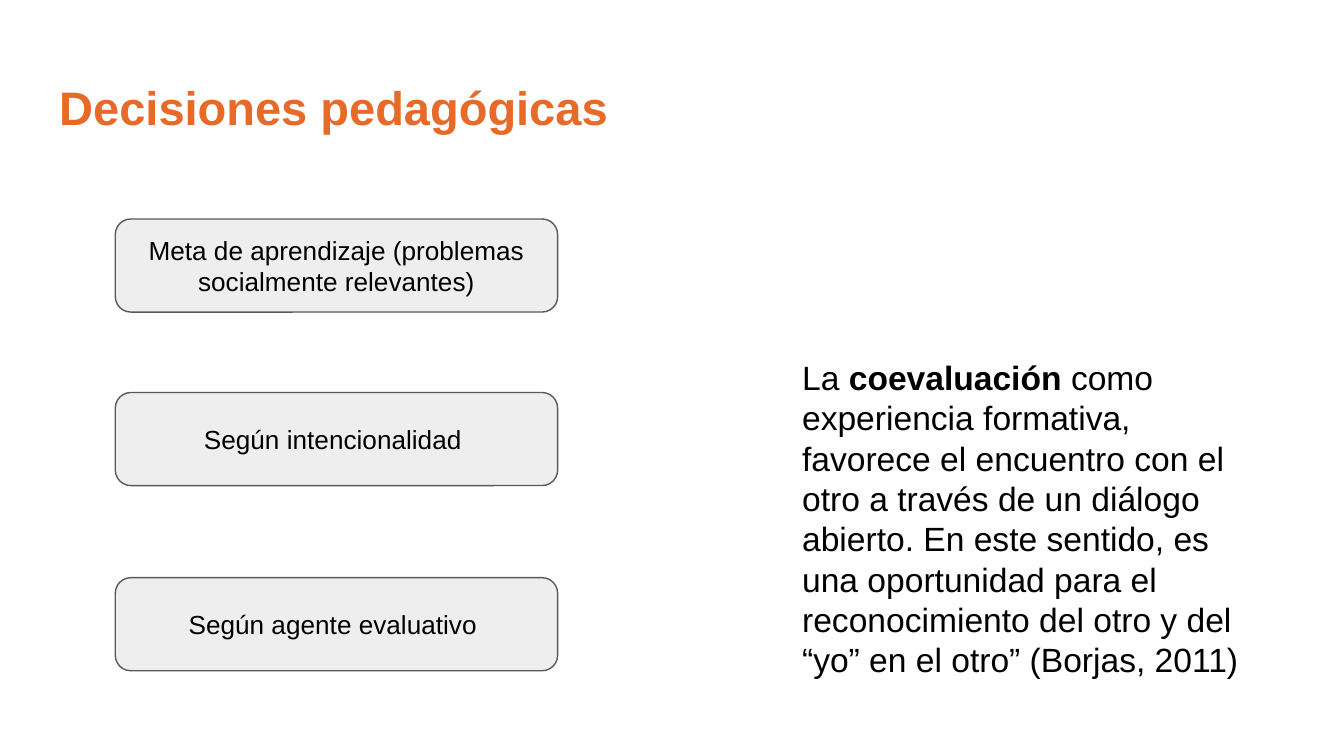
"""Build the slide on pedagogical decisions and peer assessment."""
from pptx import Presentation
from pptx.dml.color import RGBColor
from pptx.enum.shapes import MSO_SHAPE as Shape
from pptx.enum.text import MSO_ANCHOR as Anchor, PP_ALIGN as Align
from pptx.util import Cm, Pt

COLORS = {"title": "E76A28", "text": "000000", "fill": "EEEEEE", "line": "595959"}
FONT = "Arial"
MARGIN = Cm(0.25)

TITLE = [("Decisiones pedagógicas", True)]
DECISIONS = [
    ("Meta de aprendizaje (problemas socialmente relevantes)", 4.14),
    ("Según intencionalidad ", 7.42),
    ("Según agente evaluativo ", 10.92),
]
QUOTE = [
    ("La ", False),
    ("coevaluación", True),
    (" como experiencia formativa, favorece el encuentro con el otro a través "
     "de un diálogo abierto. En este sentido, es una oportunidad para el "
     "reconocimiento del otro y del “yo” en el otro” (Borjas, 2011)", False),
]


def color(name):
    return RGBColor.from_string(COLORS[name])


def write(box, runs, size, color_name="text", align=Align.LEFT, anchor=Anchor.TOP):
    frame = box.text_frame
    frame.word_wrap = True
    frame.vertical_anchor = anchor
    frame.margin_left = frame.margin_right = MARGIN
    frame.margin_top = frame.margin_bottom = MARGIN
    para = frame.paragraphs[0]
    para.alignment = align
    for text, bold in runs:
        span = para.add_run()
        span.text = text
        span.font.name = FONT
        span.font.size = Pt(size)
        span.font.bold = bold
        span.font.color.rgb = color(color_name)


def add_decision(page, text, top):
    box = page.shapes.add_shape(
        Shape.ROUNDED_RECTANGLE, Cm(2.18), Cm(top), Cm(8.36), Cm(1.76))
    box.shadow.inherit = False
    box.fill.solid()
    box.fill.fore_color.rgb = color("fill")
    box.line.color.rgb = color("line")
    box.line.width = Pt(0.75)
    write(box, [(text, False)], 14, align=Align.CENTER, anchor=Anchor.MIDDLE)


def main():
    deck = Presentation()
    deck.slide_width, deck.slide_height = Cm(25.4), Cm(14.29)
    page = deck.slides.add_slide(deck.slide_layouts[6])

    title = page.shapes.add_textbox(Cm(0.87), Cm(1.24), Cm(23.67), Cm(1.6))
    write(title, TITLE, 25.2, "title")
    for text, top in DECISIONS:
        add_decision(page, text, top)
    quote = page.shapes.add_textbox(Cm(14.91), Cm(6.5), Cm(9.09), Cm(7.06))
    write(quote, QUOTE, 18)

    deck.save("out.pptx")


if __name__ == "__main__":
    main()
